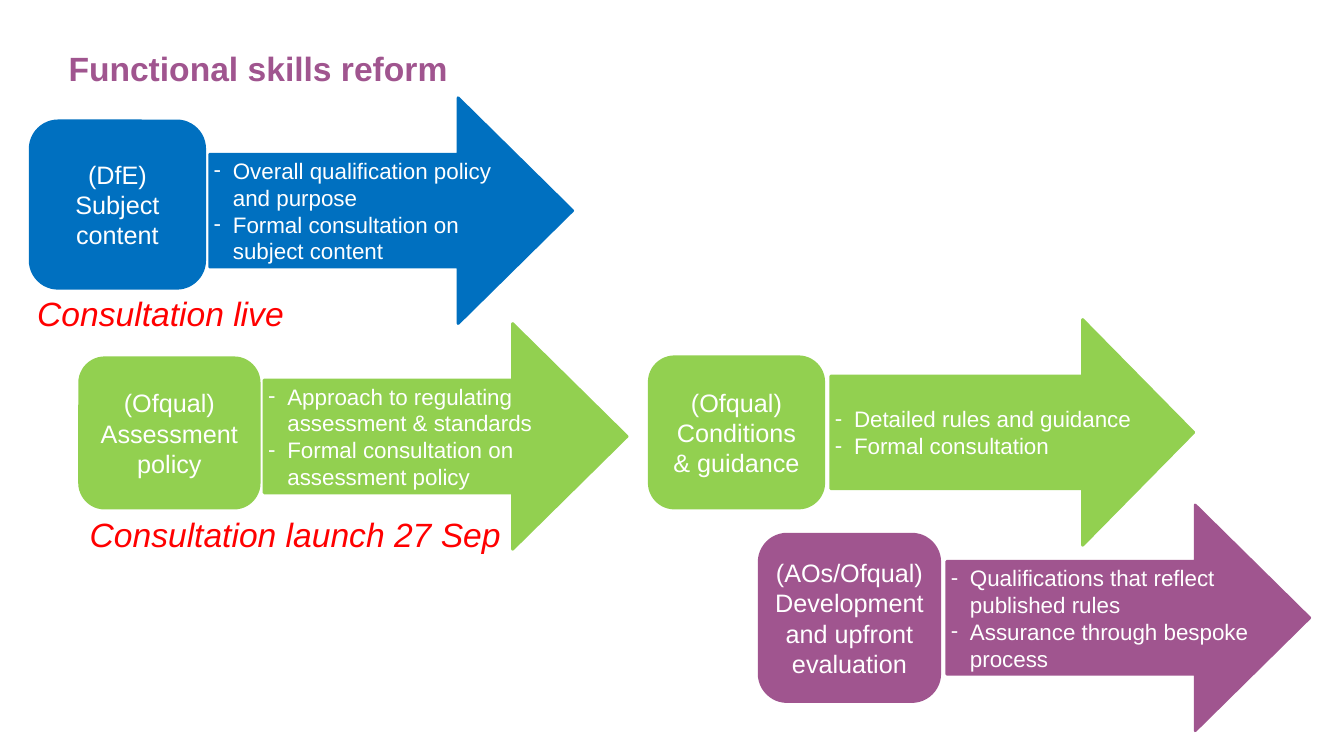
from lxml.etree import SubElement
from pptx import Presentation
from pptx.dml.color import RGBColor
from pptx.enum.shapes import MSO_SHAPE
from pptx.enum.text import MSO_ANCHOR, PP_ALIGN
from pptx.oxml.ns import qn
from pptx.util import Inches, Pt

COLOURS = {
    "blue": "0070C0",
    "green": "92D050",
    "purple": "A0558F",
    "red": "FF0000",
    "white": "FFFFFF",
}
ARROW_SIZE = (3.6, 2.24)
BULLET_INDENT = 0.19

STAGES = [
    ("blue", (0.3, 1.2, 1.73, 1.66), 0.1, ["(DfE)", "Subject content"],
     (2.08, 0.97), 0.507,
     ["Overall qualification policy and purpose", "Formal consultation on subject content"]),
    ("green", (0.79, 3.55, 1.78, 1.49), 0.1, ["(Ofqual)", "Assessment policy"],
     (2.62, 3.21), 0.507,
     ["Approach to regulating assessment & standards", "Formal consultation on assessment policy"]),
    ("green", (6.44, 3.54, 1.73, 1.5), 0.1, ["(Ofqual) Conditions & guidance"],
     (8.24, 3.17), 0.492,
     ["Detailed rules and guidance", "Formal consultation"]),
    ("purple", (7.53, 5.3, 1.79, 1.66), 0, ["(AOs/Ofqual)", "Development and upfront evaluation"],
     (9.39, 5.01), 0.507,
     ["Qualifications that reflect published rules", "Assurance through bespoke process"]),
]


def colour(name):
    """Return the named colour."""
    return RGBColor.from_string(COLOURS[name])


def set_margins(frame, side, end):
    """Set the side margins and the top and bottom margins of a frame."""
    frame.margin_left = frame.margin_right = Inches(side)
    frame.margin_top = frame.margin_bottom = Inches(end)


def style_font(font, size, name, bold=False, italic=False):
    """Apply the slide typeface with a size, colour and style."""
    font.name = "Arial"
    font.size = Pt(size)
    font.bold = bold
    font.italic = italic
    font.color.rgb = colour(name)


def add_bullet(para):
    """Give a paragraph a hanging dash."""
    properties = para._p.get_or_add_pPr()
    indent = Inches(BULLET_INDENT)
    properties.set("marL", str(indent))
    properties.set("indent", str(-indent))
    SubElement(properties, qn("a:buFont")).set("typeface", "Arial")
    SubElement(properties, qn("a:buChar")).set("char", "-")


def add_label(page, text, place, size_margins, name, wrap=False, bold=False, italic=False):
    """Add a line of 24 point text."""
    box = page.shapes.add_textbox(*map(Inches, place))
    frame = box.text_frame
    frame.word_wrap = wrap
    set_margins(frame, *size_margins)
    frame.text = text
    style_font(frame.paragraphs[0].runs[0].font, 24, name, bold, italic)


def add_block(page, kind, place, name, lines, size, margins, bulleted=False):
    """Add a filled shape with white paragraphs."""
    block = page.shapes.add_shape(kind, *map(Inches, place))
    block.shadow.inherit = False
    block.fill.solid()
    block.fill.fore_color.rgb = colour(name)
    block.line.color.rgb = colour(name)
    block.line.width = Pt(2)
    frame = block.text_frame
    frame.word_wrap = True
    frame.vertical_anchor = MSO_ANCHOR.MIDDLE
    set_margins(frame, *margins)
    frame.text = "\n".join(lines)
    for para in frame.paragraphs:
        para.alignment = PP_ALIGN.LEFT if bulleted else PP_ALIGN.CENTER
        if bulleted:
            add_bullet(para)
        style_font(para.runs[0].font, size, "white")
    return block


def add_stage(page, name, place, side, heading, arrow_corner, head, steps):
    """Add a stage box and the arrow that lists its steps."""
    add_block(page, MSO_SHAPE.ROUNDED_RECTANGLE, place, name, heading, 18, (side, 0.05))
    arrow = add_block(page, MSO_SHAPE.RIGHT_ARROW, arrow_corner + ARROW_SIZE, name, steps,
                      16, (0.04, 0), bulleted=True)
    arrow.adjustments[0] = 0.5
    arrow.adjustments[1] = head


def main():
    """Build the slide and save it."""
    deck = Presentation()
    deck.slide_width = Inches(13.33)
    deck.slide_height = Inches(7.5)
    page = deck.slides.add_slide(deck.slide_layouts[6])
    add_label(page, "Functional skills reform", (0.68, 0.44, 9.26, 0.63), (0, 0.04),
              "purple", wrap=True, bold=True)
    for stage in STAGES:
        add_stage(page, *stage)
    add_label(page, "Consultation live", (0.27, 2.86, 2.68, 0.5), (0.1, 0.05),
              "red", italic=True)
    add_label(page, "Consultation launch 27 Sep", (0.79, 5.05, 4.32, 0.5), (0.1, 0.05),
              "red", italic=True)
    deck.save("out.pptx")


if __name__ == "__main__":
    main()
